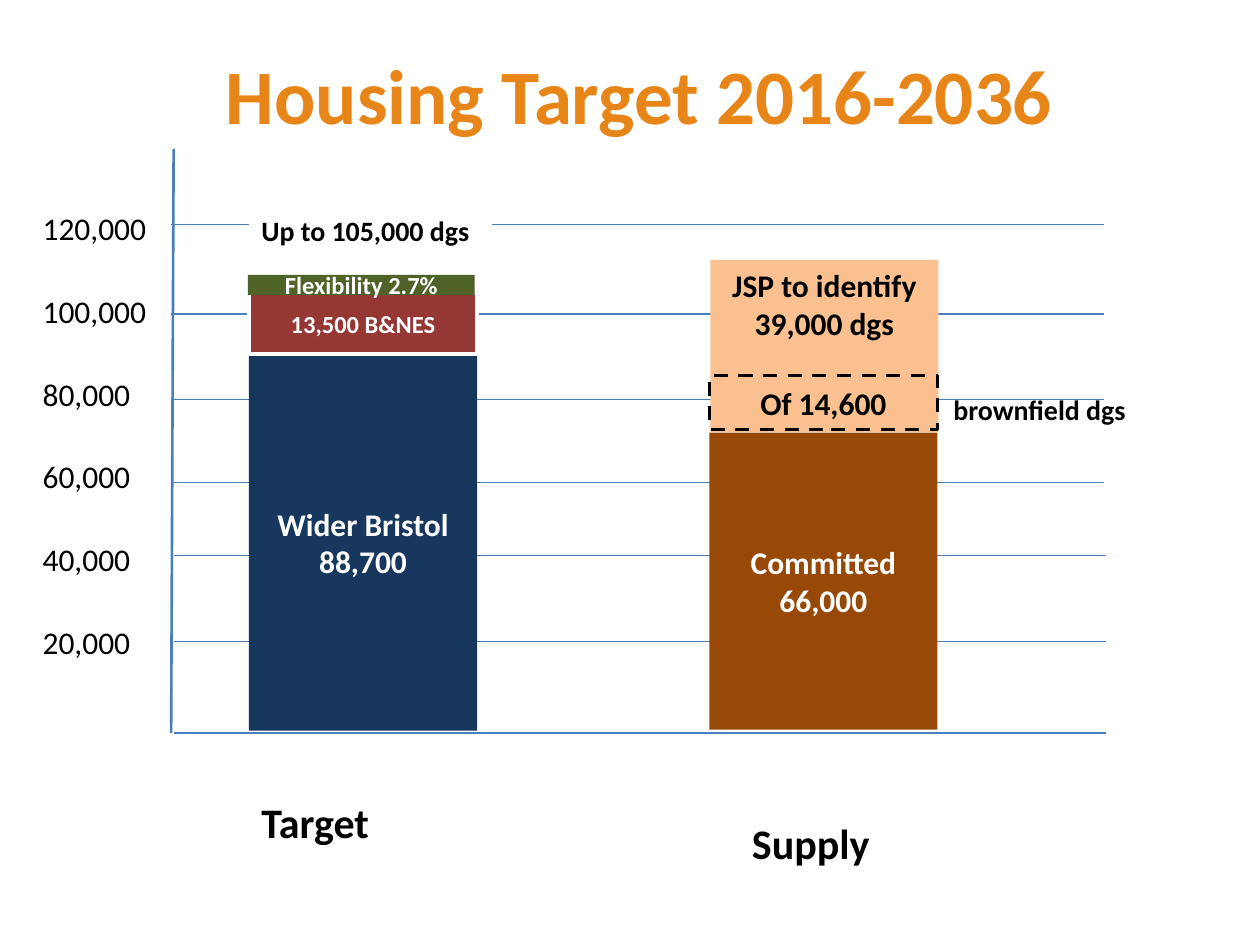
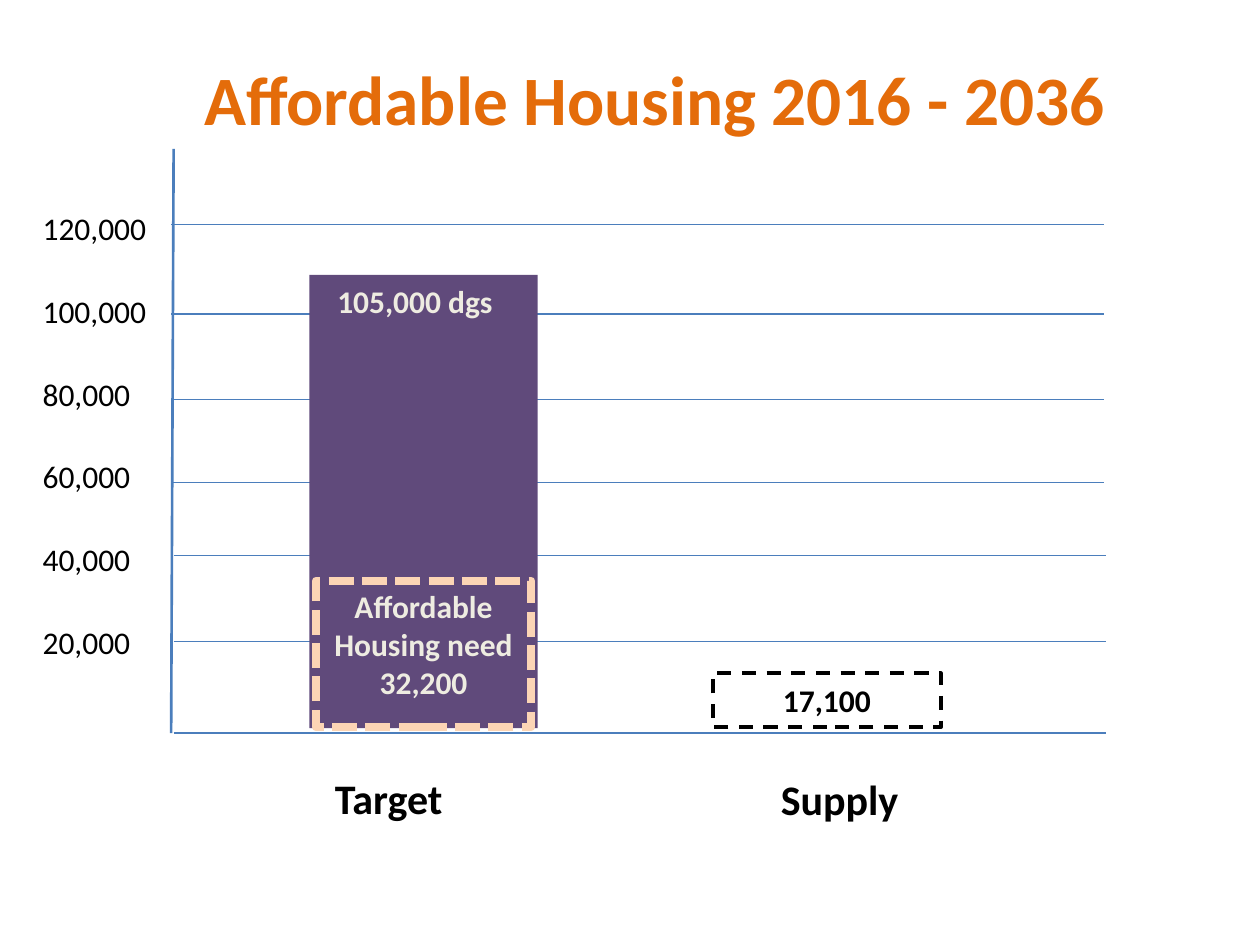
import pptx
import pptx.util
from lxml import etree
from pptx.dml.color import RGBColor
from pptx.enum.dml import MSO_LINE
from pptx.enum.shapes import MSO_CONNECTOR, MSO_SHAPE
from pptx.enum.text import MSO_ANCHOR, PP_ALIGN
from pptx.oxml.ns import qn

Cm = pptx.util.Cm
Pt = pptx.util.Pt

FONT = "Calibri"
BLACK = RGBColor(0x00, 0x00, 0x00)
WHITE = RGBColor(0xFF, 0xFF, 0xFF)
CREAM = RGBColor(0xEE, 0xEC, 0xE1)
AMBER = RGBColor(0xE8, 0x85, 0x18)
ORANGE = RGBColor(0xE4, 0x6C, 0x0A)
AXIS_BLUE = RGBColor(0x4B, 0x7E, 0xBC)
NAVY = RGBColor(0x17, 0x37, 0x5E)
BRICK = RGBColor(0x95, 0x37, 0x35)
GREEN = RGBColor(0x4F, 0x62, 0x28)
BROWN = RGBColor(0x98, 0x48, 0x07)
PEACH = RGBColor(0xFA, 0xC0, 0x90)
PALE_PEACH = RGBColor(0xFC, 0xD5, 0xB5)
PURPLE = RGBColor(0x60, 0x4A, 0x7B)

# Boxes are (left, top, width, height) in cm
PLOT = (3.45, 3.0, 18.8, 11.78)
# Gridlines: (height below the plot top, shift to the right)
GRID = [(1.52, 0), (3.33, 0), (5.05, 0), (6.73, 0), (8.2, 0.05), (9.93, 0.05)]
AXIS_LABELS = ["120,000", "100,000", "80,000", "60,000", "40,000", "20,000"]


def inside(box, part):
    """Turn a part's place within a box into slide lengths."""
    left, top, width, height = part
    return Cm(box[0] + left), Cm(box[1] + top), Cm(width), Cm(height)


def write(sp, lines, size, color, bold=True, align=PP_ALIGN.LEFT,
          anchor=MSO_ANCHOR.TOP, gap=0):
    tf = sp.text_frame
    tf.word_wrap = True
    tf.vertical_anchor = anchor
    for i, line in enumerate(lines):
        p = tf.add_paragraph() if i else tf.paragraphs[0]
        p.text = line
        p.alignment = align
        p.space_before = Pt(gap if i else 0)
        p.font.name = FONT
        p.font.size = Pt(size)
        p.font.bold = bold
        p.font.color.rgb = color


def add_label(s, box, part, lines, size, color=BLACK, **style):
    sp = s.shapes.add_textbox(*inside(box, part))
    write(sp, lines, size, color, **style)
    return sp


def add_bar(s, box, part, lines=(), fill=None, line=None, width=2, dash=None,
            size=18, color=WHITE, anchor=MSO_ANCHOR.MIDDLE):
    sp = s.shapes.add_shape(MSO_SHAPE.RECTANGLE, *inside(box, part))
    sp.shadow.inherit = False
    if fill is None:
        sp.fill.background()
    else:
        sp.fill.solid()
        sp.fill.fore_color.rgb = fill
    if line is None:
        sp.line.fill.background()
    else:
        sp.line.color.rgb = line
        sp.line.width = Pt(width)
        sp.line.dash_style = dash
    write(sp, lines, size, color, align=PP_ALIGN.CENTER, anchor=anchor)


def add_line(s, box, x1, y1, x2, y2, width):
    left, top = box[:2]
    cn = s.shapes.add_connector(MSO_CONNECTOR.STRAIGHT, Cm(left + x1),
                                Cm(top + y1), Cm(left + x2), Cm(top + y2))
    cn.line.color.rgb = AXIS_BLUE
    cn.line.width = Pt(width)
    etree.SubElement(cn._element.spPr, qn("a:effectLst"))


def draw_title(s, box, text, size, color):
    add_label(s, box, (0, 0, *box[2:]), [text], size, color,
              align=PP_ALIGN.CENTER, anchor=MSO_ANCHOR.MIDDLE)


def draw_axes(s, box):
    _, _, width, height = box
    add_line(s, box, 0.05, 0, 0, height, 1.5)
    add_line(s, box, 0.05, height, width + 0.05, height, 1.5)
    for y, shift in GRID:
        add_line(s, box, shift, y, width + shift, y, 0.75)
    add_label(s, box, (-2.84, 1.09, 2.82, 10.31), AXIS_LABELS, 18,
              bold=False, gap=25.7)


def draw_housing_bars(s, box):
    # Target stack
    add_bar(s, box, (1.57, 4.14, 4.6, 7.59), ["Wider Bristol", "88,700"], NAVY)
    add_bar(s, box, (1.57, 2.92, 4.6, 1.22), ["13,500 B&NES"], BRICK,
            line=WHITE, size=14)
    add_bar(s, box, (1.55, 2.54, 4.57, 0.41), ["Flexibility 2.7%"], GREEN, size=14)
    total = add_label(s, box, (1.57, 1.19, 4.9, 0.94), ["Up to 105,000 dgs"], 16)
    total.fill.solid()
    total.fill.fore_color.rgb = WHITE
    # Supply stack
    add_bar(s, box, (10.85, 5.72, 4.6, 5.99), ["Committed", "66,000"], BROWN)
    add_bar(s, box, (10.87, 2.24, 4.6, 3.48), ["JSP to identify 39,000 dgs"],
            PEACH, color=BLACK, anchor=MSO_ANCHOR.TOP)
    add_bar(s, box, (10.85, 4.57, 4.6, 1.09), ["Of 14,600"], line=BLACK,
            dash=MSO_LINE.DASH, color=BLACK)
    add_label(s, box, (15.52, 4.78, 4.17, 0.94), ["brownfield dgs"], 16)
    # Stack names
    add_label(s, box, (1.57, 12.93, 3, 1.27), ["Target"], 24)
    add_label(s, box, (11.46, 13.36, 3.2, 1.27), ["Supply"], 24)


def draw_affordable_bars(s, box):
    # Target bar and the need within it
    add_bar(s, box, (2.79, 2.54, 4.6, 9.14), fill=PURPLE)
    add_label(s, box, (3.1, 2.57, 4, 1.02), ["105,000 dgs"], 18, CREAM)
    add_bar(s, box, (2.92, 8.71, 4.34, 2.95), ["Affordable Housing need 32,200"],
            line=PALE_PEACH, width=4.75, dash=MSO_LINE.SQUARE_DOT,
            color=CREAM, anchor=MSO_ANCHOR.TOP)
    # Supply bar
    add_bar(s, box, (10.92, 10.57, 4.6, 1.09), ["17,100"], line=BLACK,
            dash=MSO_LINE.DASH, color=BLACK)
    # Bar names
    add_label(s, box, (3.05, 12.45, 3, 1.27), ["Target"], 24)
    add_label(s, box, (12.04, 12.47, 3.2, 1.27), ["Supply"], 24)


def build_slide(prs, title_box, title, size, color, draw_bars):
    s = prs.slides.add_slide(prs.slide_layouts[6])
    draw_axes(s, PLOT)
    draw_title(s, title_box, title, size, color)
    draw_bars(s, PLOT)


def main():
    prs = pptx.Presentation()
    prs.slide_width, prs.slide_height = Cm(25.4), Cm(19.05)
    build_slide(prs, (3.99, 0.79, 17.81, 2.21), "Housing Target 2016-2036",
                44, AMBER, draw_housing_bars)
    build_slide(prs, (3.45, 0.86, 19.51, 2.21), "Affordable Housing 2016 - 2036",
                39.6, ORANGE, draw_affordable_bars)
    prs.save("out.pptx")


if __name__ == "__main__":
    main()
